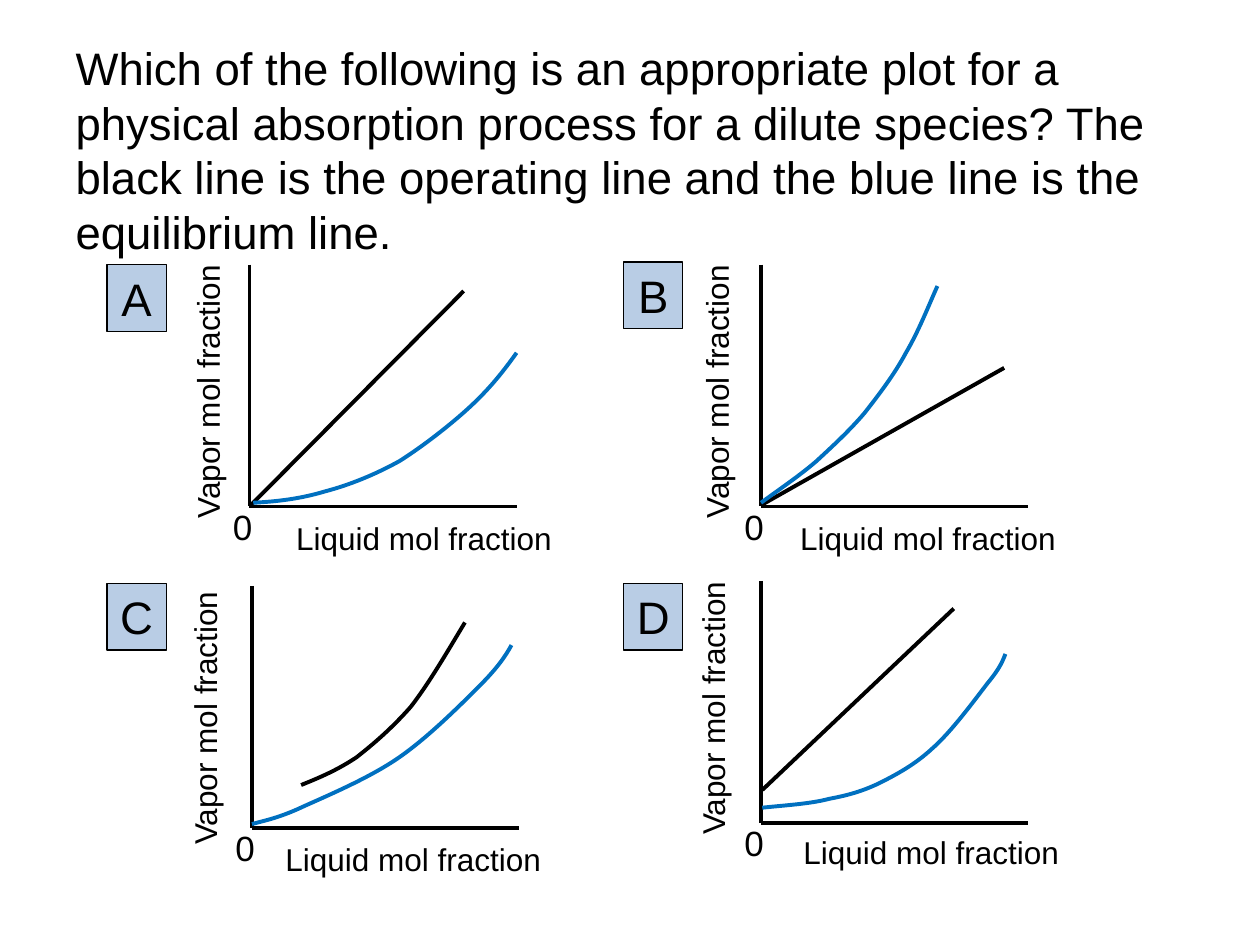
from lxml.etree import SubElement
from pptx import Presentation
from pptx.dml.color import RGBColor
from pptx.enum.shapes import MSO_CONNECTOR, MSO_SHAPE
from pptx.enum.text import MSO_ANCHOR, PP_ALIGN
from pptx.oxml.ns import qn
from pptx.util import Inches, Pt

BLACK, BLUE, PALE_BLUE = "000000", "0070C0", "B9CDE5"
AXIS_HEIGHT, AXIS_WIDTH = 1.92, 2.12
LABEL_HEIGHT = 0.4

QUESTION = ("Which of the following is an appropriate plot for a physical absorption "
            "process for a dilute species? The black line is the operating line and "
            "the blue line is the equilibrium line.")

# Label boxes are (left, top, width); the vapor box is given before its rotation.
PLOTS = [
    {"letter": "A", "badge": (0.85, 2.1), "origin": (1.98, 4.02),
     "liquid": (2.19, 4.07, 2.35), "vapor": (0.52, 2.91, 2.25)},
    {"letter": "B", "badge": (4.95, 2.08), "origin": (6.04, 4.02),
     "liquid": (6.12, 4.07, 2.49), "vapor": (4.56, 2.91, 2.25)},
    {"letter": "C", "badge": (0.85, 4.63), "origin": (2, 6.57),
     "liquid": (2.1, 6.62, 2.36), "vapor": (0.49, 5.5, 2.27)},
    {"letter": "D", "badge": (4.95, 4.63), "origin": (6.04, 6.53),
     "liquid": (6.18, 6.56, 2.42), "vapor": (4.5, 5.42, 2.31)},
]

OPERATING_LINES = [
    ((1.99, 4.01), (3.68, 2.31)),  # A
    ((6.05, 6.27), (7.57, 4.83)),  # D
    ((6.04, 4.01), (7.97, 2.92)),  # B
]

# Each curve is a start point followed by three Bézier points per segment.
CURVES = [
    (BLUE, [(2.01, 3.99), (2.2, 3.98), (2.38, 3.96), (2.58, 3.9),
            (2.77, 3.85), (2.97, 3.77), (3.17, 3.66),
            (3.36, 3.54), (3.59, 3.36), (3.74, 3.22),
            (3.9, 3.07), (4, 2.94), (4.1, 2.8)]),  # A
    (BLUE, [(6.04, 3.99), (6.19, 3.88), (6.34, 3.78), (6.48, 3.66),
            (6.61, 3.54), (6.74, 3.42), (6.86, 3.28),
            (6.97, 3.14), (7.1, 2.97), (7.19, 2.8),
            (7.29, 2.63), (7.36, 2.45), (7.44, 2.27)]),  # B
    (BLUE, [(6.05, 6.41), (6.24, 6.39), (6.43, 6.38), (6.58, 6.34),
            (6.74, 6.31), (6.84, 6.28), (6.97, 6.22),
            (7.11, 6.15), (7.26, 6.07), (7.4, 5.94),
            (7.55, 5.81), (7.74, 5.55), (7.84, 5.42),
            (7.94, 5.3), (7.96, 5.24), (7.98, 5.19)]),  # D
    (BLUE, [(2, 6.54), (2.11, 6.51), (2.22, 6.49), (2.41, 6.4),
            (2.61, 6.31), (2.94, 6.17), (3.17, 6.01),
            (3.4, 5.85), (3.65, 5.6), (3.8, 5.45),
            (3.95, 5.3), (4.01, 5.21), (4.06, 5.12)]),  # C
    (BLACK, [(2.39, 6.23), (2.54, 6.17), (2.68, 6.11), (2.83, 6.01),
             (2.97, 5.9), (3.11, 5.78), (3.26, 5.61),
             (3.4, 5.43), (3.54, 5.19), (3.69, 4.94)]),  # C
]


def color(hex_string):
    return RGBColor.from_string(hex_string)


def write(shape, text, size, alignment=PP_ALIGN.CENTER):
    shape.text_frame.text = text
    paragraph = shape.text_frame.paragraphs[0]
    paragraph.alignment = alignment
    font = paragraph.runs[0].font
    font.name, font.size = "Arial", Pt(size)
    font.color.rgb = color(BLACK)


def add_label(shapes, text, size, box, alignment=PP_ALIGN.CENTER, wrap=True):
    label = shapes.add_textbox(*map(Inches, box))
    label.text_frame.word_wrap = wrap
    write(label, text, size, alignment)
    return label


def add_line(shapes, start, end):
    line = shapes.add_connector(MSO_CONNECTOR.STRAIGHT, *map(Inches, (*start, *end)))
    line.line.color.rgb = color(BLACK)
    line.line.width = Pt(2.25)
    SubElement(line._element.spPr, qn("a:effectLst"))


def add_curve(shapes, line_color, points):
    """Draw the points as a polyline, then merge each three lines into one Bézier segment."""
    start, *rest = [tuple(map(Inches, point)) for point in points]
    builder = shapes.build_freeform(*start)
    builder.add_line_segments(rest, close=False)
    curve = builder.convert_to_shape()
    lines = list(curve._element.iter(qn("a:lnTo")))
    for first in range(0, len(lines), 3):
        segment = lines[first].getparent().makeelement(qn("a:cubicBezTo"), {})
        lines[first].addprevious(segment)
        for line in lines[first:first + 3]:
            segment.append(line[0])
            line.getparent().remove(line)
    curve.shadow.inherit = False
    curve.fill.background()
    curve.line.color.rgb = color(line_color)
    curve.line.width = Pt(2.25)


def add_axes(slide, plot):
    shapes = slide.shapes.add_group_shape().shapes
    x, y = plot["origin"]
    add_line(shapes, (x, y - AXIS_HEIGHT), (x, y))
    add_line(shapes, (x, y), (x + AXIS_WIDTH, y))
    add_label(shapes, "Liquid mol fraction", 18, (*plot["liquid"], LABEL_HEIGHT))
    vapor = add_label(shapes, "Vapor mol fraction", 18, (*plot["vapor"], LABEL_HEIGHT))
    vapor.rotation = 270
    add_label(shapes, "0", 20, (x - 0.23, y - 0.06, 0.35, 0.43), PP_ALIGN.LEFT, wrap=False)


def add_badge(slide, plot):
    badge = slide.shapes.add_shape(
        MSO_SHAPE.RECTANGLE, *map(Inches, (*plot["badge"], 0.47, 0.53)))
    badge.shadow.inherit = False
    badge.fill.solid()
    badge.fill.fore_color.rgb = color(PALE_BLUE)
    badge.line.color.rgb = color(BLACK)
    badge.line.width = Pt(0.75)
    badge.text_frame.vertical_anchor = MSO_ANCHOR.MIDDLE
    write(badge, plot["letter"], 26)


def add_question(slide):
    question = add_label(slide.shapes, QUESTION, 26, (0.6, 0.32, 8.79, 1.46), PP_ALIGN.LEFT)
    frame = question.text_frame
    frame.margin_left = frame.margin_top = frame.margin_right = frame.margin_bottom = 0


def main():
    presentation = Presentation()
    presentation.slide_width, presentation.slide_height = Inches(10), Inches(7.5)
    slide = presentation.slides.add_slide(presentation.slide_layouts[6])
    add_question(slide)
    for plot in PLOTS:
        add_axes(slide, plot)
    for start, end in OPERATING_LINES:
        add_line(slide.shapes, start, end)
    for line_color, points in CURVES:
        add_curve(slide.shapes, line_color, points)
    for plot in PLOTS:
        add_badge(slide, plot)
    presentation.save("out.pptx")


if __name__ == "__main__":
    main()
